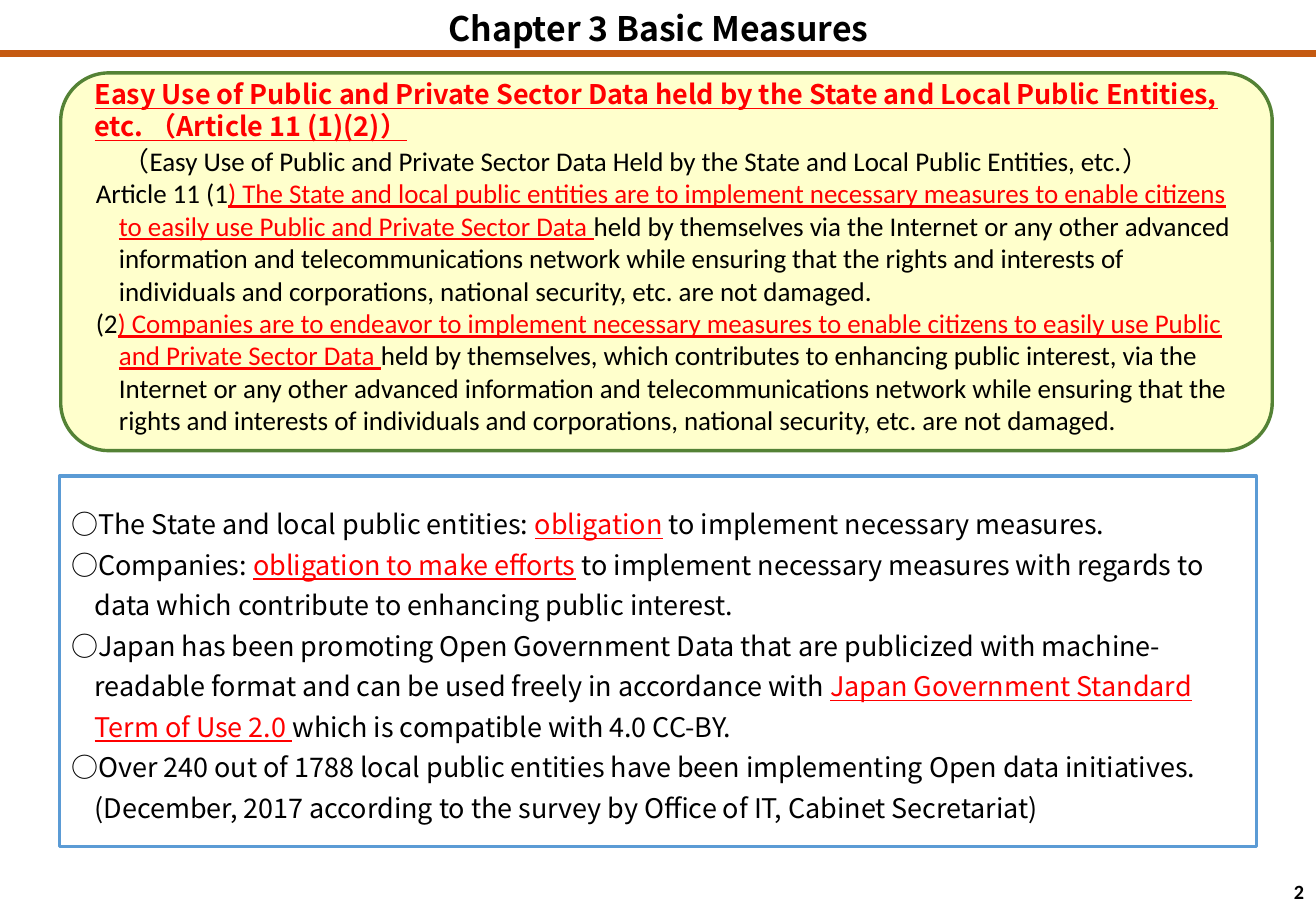
from lxml import etree
from pptx import Presentation
from pptx import util as u
from pptx.dml.color import RGBColor
from pptx.enum import shapes, text
from pptx.oxml.ns import qn

COLORS = {
    "ink": "000000",
    "key": "FF0000",
    "rule": "C55A11",
    "article_fill": "FFFFCC",
    "article_line": "548235",
    "summary_line": "5B9BD5",
}
CJK = "Noto Sans CJK JP"
LATIN = "Calibri"
HANGING = 0.19


def rgb(name):
    return RGBColor.from_string(COLORS[name])


class SlideBuilder:
    def __init__(self, slide):
        self.s = slide

    def rule(self, x1, y1, x2, y2, color, width):
        c = self.s.shapes.add_connector(
            shapes.MSO_CONNECTOR.STRAIGHT,
            u.Inches(x1), u.Inches(y1), u.Inches(x2), u.Inches(y2))
        c.line.color.rgb = rgb(color)
        c.line.width = u.Pt(width)
        etree.SubElement(c._element.spPr, qn("a:effectLst"))

    def box(self, x, y, w, h, line, fill=None, radius=None):
        kind = shapes.MSO_SHAPE.ROUNDED_RECTANGLE if radius else shapes.MSO_SHAPE.RECTANGLE
        sp = self.s.shapes.add_shape(
            kind, u.Inches(x), u.Inches(y), u.Inches(w), u.Inches(h))
        sp.shadow.inherit = False
        if radius:
            sp.adjustments[0] = radius
        if fill:
            sp.fill.solid()
            sp.fill.fore_color.rgb = rgb(fill)
        else:
            sp.fill.background()
        sp.line.color.rgb = rgb(line)
        sp.line.width = u.Pt(2)
        return sp

    def textbox(self, x, y, w, h, top=0.05):
        sp = self.s.shapes.add_textbox(
            u.Inches(x), u.Inches(y), u.Inches(w), u.Inches(h))
        sp.text_frame.margin_top = u.Inches(top)
        return sp

    def set_text(self, sp, paragraphs, size=16, spacing=None,
                 align=text.PP_ALIGN.LEFT, anchor=text.MSO_ANCHOR.TOP):
        tf = sp.text_frame
        tf.word_wrap = True
        tf.vertical_anchor = anchor
        for i, (runs, indent) in enumerate(paragraphs):
            p = tf.add_paragraph() if i else tf.paragraphs[0]
            p.alignment = align
            if spacing:
                p.line_spacing = u.Pt(spacing)
            if indent:
                pPr = p._p.get_or_add_pPr()
                pPr.set("marL", str(u.Inches(indent)))
                pPr.set("indent", str(-u.Inches(indent)))
            for words, font, color, bold, underline in runs:
                r = p.add_run()
                r.text = words
                r.font.size = u.Pt(size)
                r.font.name = font
                r.font.bold = bold
                r.font.underline = underline
                r.font.color.rgb = rgb(color)
                ea = etree.SubElement(r._r.get_or_add_rPr(), qn("a:ea"))
                ea.set("typeface", CJK)


def plain(words, font=CJK, bold=False):
    return words, font, "ink", bold, False


def key(words, font=CJK, bold=False):
    return words, font, "key", bold, True


def marked(font, *pieces):
    runs = [(key if i % 2 else plain)(words, font) for i, words in enumerate(pieces)]
    return runs, HANGING


def main():
    prs = Presentation()
    prs.slide_width = u.Inches(10.83)
    prs.slide_height = u.Inches(7.5)
    b = SlideBuilder(prs.slides.add_slide(prs.slide_layouts[6]))

    title = b.textbox(0.37, 0, 10.1, 0.44)
    b.set_text(title, [([plain("Chapter 3 Basic Measures", bold=True)], 0)],
               size=20, spacing=25, align=text.PP_ALIGN.CENTER)
    b.rule(0, 0.44, 10.83, 0.44, "rule", 4)

    b.box(0.5, 0.6, 9.97, 3.11, "article_line", "article_fill", 0.127)
    article = b.textbox(0.69, 1.12, 9.59, 2.79, top=0.07)
    b.set_text(article, [
        ([plain("　（"),
          plain("Easy Use of Public and Private Sector Data Held by the State "
                "and Local Public Entities, etc.", LATIN),
          plain("）")], 0),
        marked(LATIN, "Article 11 (1",
               ") The State and local public entities are to implement necessary "
               "measures to enable citizens to easily use Public and Private Sector Data ",
               "held by themselves via the Internet or any other advanced information "
               "and telecommunications network while ensuring that the rights and "
               "interests of individuals and corporations, national security, etc. "
               "are not damaged."),
        marked(LATIN, "(2",
               ") Companies are to endeavor to implement necessary measures to enable "
               "citizens to easily use Public and Private Sector Data ",
               "held by themselves, which contributes to enhancing public interest, via "
               "the Internet or any other advanced information and telecommunications "
               "network while ensuring that the rights and interests of individuals and "
               "corporations, national security, etc. are not damaged."),
    ], spacing=19.2)

    heading = b.textbox(0.68, 0.56, 9.76, 0.65, top=0.08)
    b.set_text(heading, [([key(
        "Easy Use of Public and Private Sector Data held by the State and Local "
        "Public Entities, etc. （Article 11 (1)(2)）", bold=True)], 0)], spacing=19)

    summary = b.box(0.49, 3.92, 9.85, 3.05, "summary_line")
    b.set_text(summary, [
        marked(CJK, "○The State and local public entities: ", "obligation",
               " to implement necessary measures."),
        marked(CJK, "○Companies: ", "obligation to make efforts",
               " to implement necessary measures with regards to data which "
               "contribute to enhancing public interest."),
        marked(CJK, "○Japan has been promoting Open Government Data that are publicized "
               "with machine-readable format and can be used freely in accordance with ",
               "Japan Government Standard Term of Use 2.0 ",
               "which is compatible with 4.0 CC-BY."),
        marked(CJK, "○Over 240 out of 1788 local public entities have been implementing "
               "Open data initiatives. (December, 2017 according to the survey by "
               "Office of IT, Cabinet Secretariat)"),
    ], spacing=24, anchor=text.MSO_ANCHOR.MIDDLE)

    number = b.textbox(8.3, 7.19, 2.53, 0.3)
    b.set_text(number, [([plain("2", LATIN, bold=True)], 0)], size=12,
               align=text.PP_ALIGN.RIGHT, anchor=text.MSO_ANCHOR.MIDDLE)

    prs.save("out.pptx")


if __name__ == "__main__":
    main()
